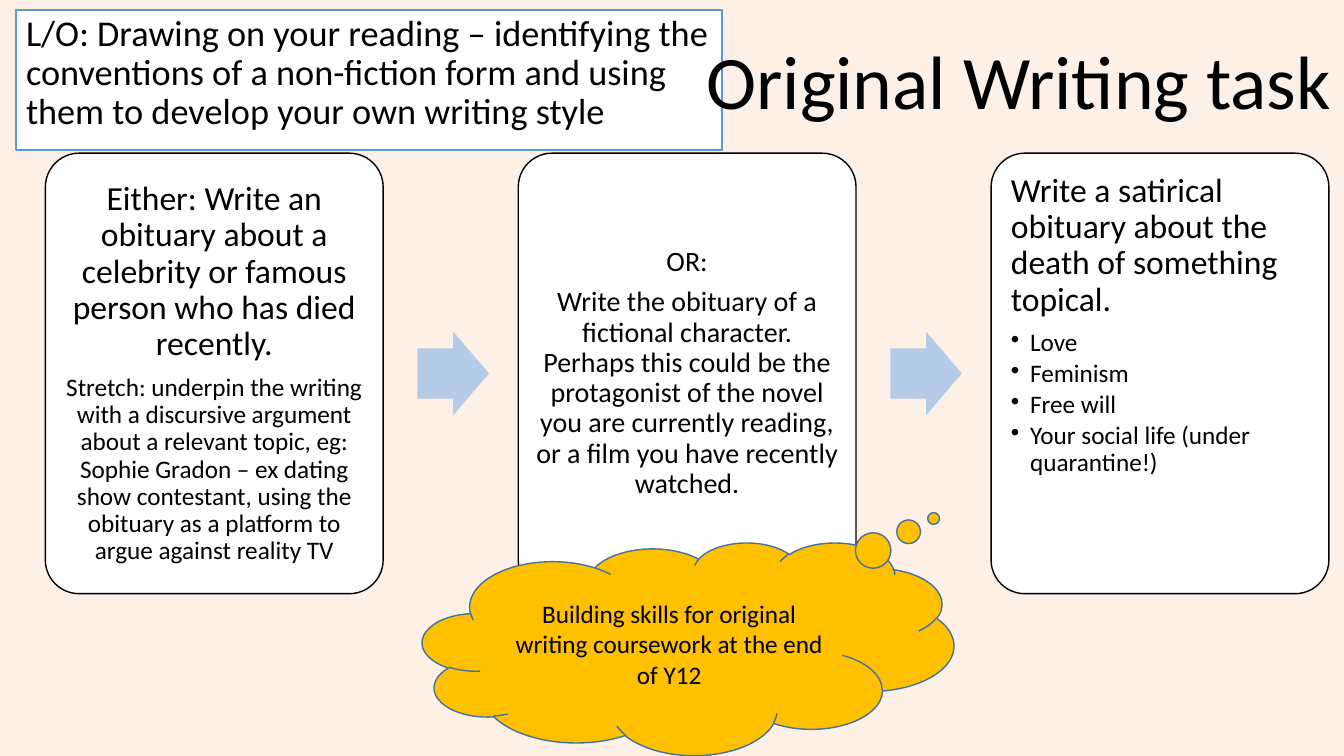
from dataclasses import dataclass

from lxml.etree import SubElement
from pptx import Presentation
from pptx.dml.color import RGBColor
from pptx.enum.shapes import MSO_SHAPE
from pptx.enum.text import MSO_ANCHOR, MSO_AUTO_SIZE, PP_ALIGN
from pptx.oxml.ns import qn
from pptx.util import Inches, Pt

COLOURS = {
    "background": "FDF0E7",
    "white": "FFFFFF",
    "black": "000000",
    "arrow": "B5CBE7",
    "cloud": "FFC000",
    "cloud line": "43739E",
    "objective line": "5B9BD5",
}
FONT = "Calibri"
CARD_LEFT, CARD_TOP, CARD_WIDTH, CARD_HEIGHT = 0.45, 1.52, 3.35, 4.37
ARROW_LEFT, ARROW_TOP, ARROW_WIDTH, ARROW_HEIGHT = 4.14, 3.29, 0.71, 0.83
CARD_PITCH = 4.69
BULLET_INDENT = 0.19


@dataclass(frozen=True)
class Line:
    text: str
    size: float
    bullet: bool = False


@dataclass(frozen=True)
class Card:
    lines: tuple[Line, ...]
    inset: float
    align: PP_ALIGN = PP_ALIGN.CENTER
    anchor: MSO_ANCHOR = MSO_ANCHOR.MIDDLE


CARDS = (
    Card((
        Line("Either: Write an obituary about a celebrity or famous person who has died recently.", 24),
        Line("Stretch: underpin the writing with a discursive argument about a relevant topic, eg: "
             "Sophie Gradon – ex dating show contestant, using the obituary as a platform to "
             "argue against reality TV", 18),
    ), 0.1),
    Card((
        Line("OR:", 20),
        Line("Write the obituary of a fictional character. Perhaps this could be the protagonist "
             "of the novel you are currently reading, or a film you have recently watched.", 20),
    ), 0.08),
    Card((
        Line("Write a satirical obituary about the death of something topical.", 24),
        Line("Love", 18, True),
        Line("Feminism", 18, True),
        Line("Free will", 18, True),
        Line("Your social life (under quarantine!)", 18, True),
    ), 0.1, PP_ALIGN.LEFT, MSO_ANCHOR.TOP),
)


def colour(name: str) -> RGBColor:
    return RGBColor.from_string(COLOURS[name])


def add_block(page, kind: MSO_SHAPE, left: float, top: float, width: float, height: float,
              fill: str, line: str | None = None, adjustments: tuple[float, ...] = ()):
    block = page.shapes.add_shape(kind, Inches(left), Inches(top), Inches(width), Inches(height))
    block.shadow.inherit = False
    block.fill.solid()
    block.fill.fore_color.rgb = colour(fill)
    if line:
        block.line.color.rgb = colour(line)
        block.line.width = Pt(1)
    else:
        block.line.fill.background()
    for index, value in enumerate(adjustments):
        block.adjustments[index] = value
    block.text_frame.word_wrap = True
    return block


def add_span(para, text: str, size: float) -> None:
    span = para.add_run()
    span.text = text
    span.font.name = FONT
    span.font.size = Pt(size)
    span.font.color.rgb = colour("black")


def set_space_after(para, percent: int) -> None:
    spacing = SubElement(para._p.get_or_add_pPr(), qn("a:spcAft"))
    SubElement(spacing, qn("a:spcPct"), val=str(percent * 1000))


def add_bullet(para) -> None:
    para.level = 1
    properties = para._p.get_or_add_pPr()
    properties.set("marL", str(Inches(BULLET_INDENT)))
    properties.set("indent", str(-Inches(BULLET_INDENT)))
    SubElement(properties, qn("a:buChar"), char="•")


def add_card(page, card: Card, left: float) -> None:
    box = add_block(page, MSO_SHAPE.ROUNDED_RECTANGLE, left, CARD_TOP, CARD_WIDTH, CARD_HEIGHT,
                    "white", "black", (0.1,))
    frame = box.text_frame
    frame.vertical_anchor = card.anchor
    frame.margin_left = frame.margin_right = Inches(card.inset)
    frame.margin_top = frame.margin_bottom = Inches(card.inset)
    for index, line in enumerate(card.lines):
        para = frame.add_paragraph() if index else frame.paragraphs[0]
        para.alignment = card.align
        para.line_spacing = 0.9
        set_space_after(para, 15 if line.bullet else 35)
        if line.bullet:
            add_bullet(para)
        add_span(para, line.text, line.size)


def add_cloud(page) -> None:
    cloud = add_block(page, MSO_SHAPE.CLOUD_CALLOUT, 4.19, 5.38, 5.27, 2.11,
                      "cloud", "cloud line", (0.462, -0.612))
    cloud.text_frame.vertical_anchor = MSO_ANCHOR.MIDDLE
    para = cloud.text_frame.paragraphs[0]
    para.alignment = PP_ALIGN.CENTER
    add_span(para, "Building skills for original writing coursework at the end of Y12", 18)


def add_objective(page) -> None:
    objective = add_block(page, MSO_SHAPE.RECTANGLE, 0.16, 0.1, 7, 1.39, "white", "objective line")
    objective.text_frame.vertical_anchor = MSO_ANCHOR.TOP
    para = objective.text_frame.paragraphs[0]
    para.alignment = PP_ALIGN.LEFT
    para.line_spacing = 0.9
    para.space_before = Pt(10)
    add_span(para, "L/O: Drawing on your reading – identifying the conventions of a non-fiction "
                   "form and using them to develop your own writing style", 25.9)


def place_title(page) -> None:
    title = page.shapes.title
    title.left, title.top = Inches(6.87), Inches(0.29)
    title.width, title.height = Inches(6.47), Inches(1.01)
    frame = title.text_frame
    frame.word_wrap = False
    frame.auto_size = MSO_AUTO_SIZE.SHAPE_TO_FIT_TEXT
    frame.vertical_anchor = MSO_ANCHOR.TOP
    para = frame.paragraphs[0]
    para.alignment = PP_ALIGN.CENTER
    para.line_spacing = 1.0
    add_span(para, "Original Writing task", 54)
    title.element.getparent().append(title.element)


def main() -> None:
    deck = Presentation()
    deck.slide_width, deck.slide_height = Inches(13.33), Inches(7.5)
    page = deck.slides.add_slide(deck.slide_layouts[5])
    page.background.fill.solid()
    page.background.fill.fore_color.rgb = colour("background")
    for index, card in enumerate(CARDS):
        offset = index * CARD_PITCH
        add_card(page, card, CARD_LEFT + offset)
        if index < len(CARDS) - 1:
            add_block(page, MSO_SHAPE.RIGHT_ARROW, ARROW_LEFT + offset, ARROW_TOP,
                      ARROW_WIDTH, ARROW_HEIGHT, "arrow", adjustments=(0.6, 0.5))
    add_cloud(page)
    add_objective(page)
    place_title(page)
    deck.save("out.pptx")


if __name__ == "__main__":
    main()
